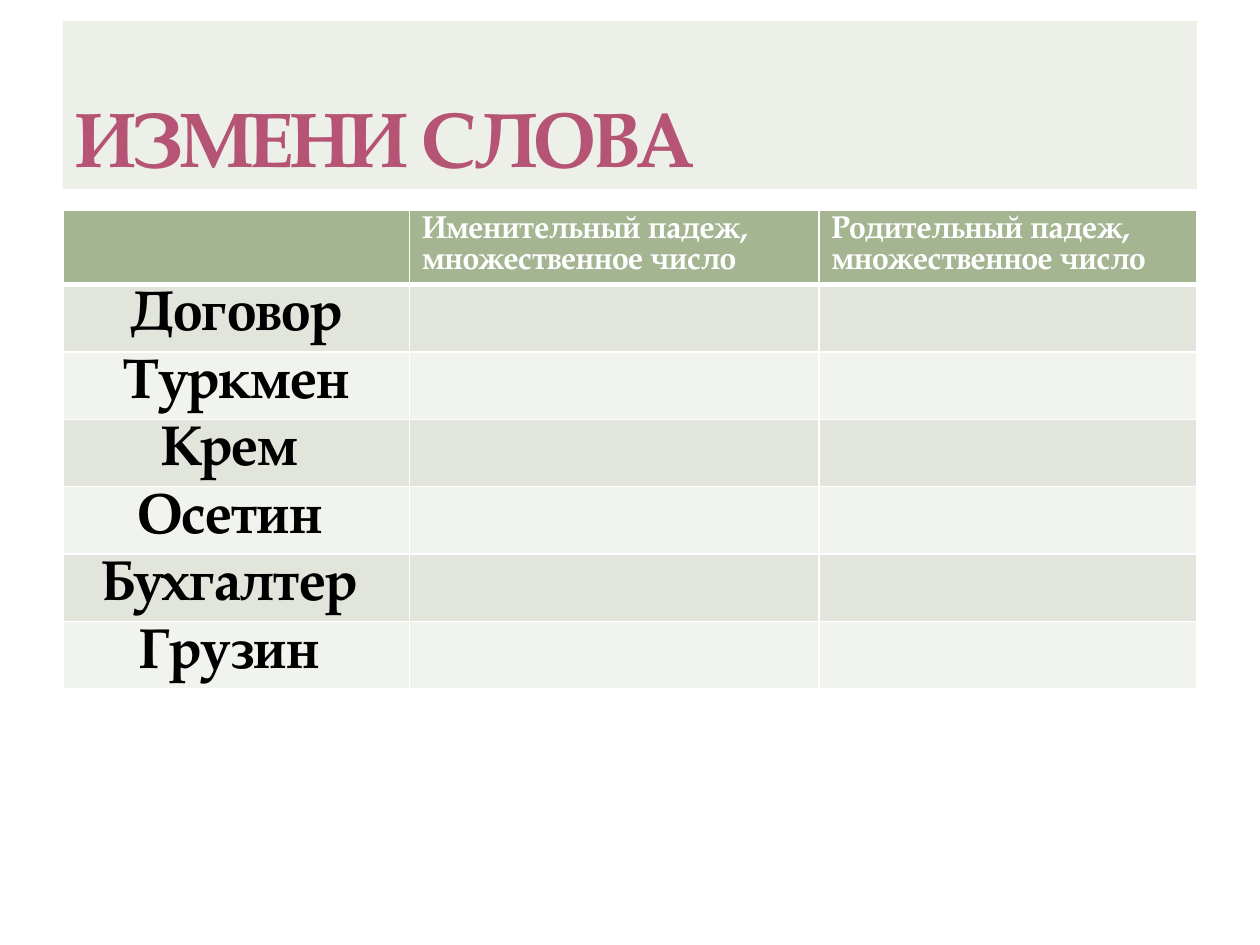
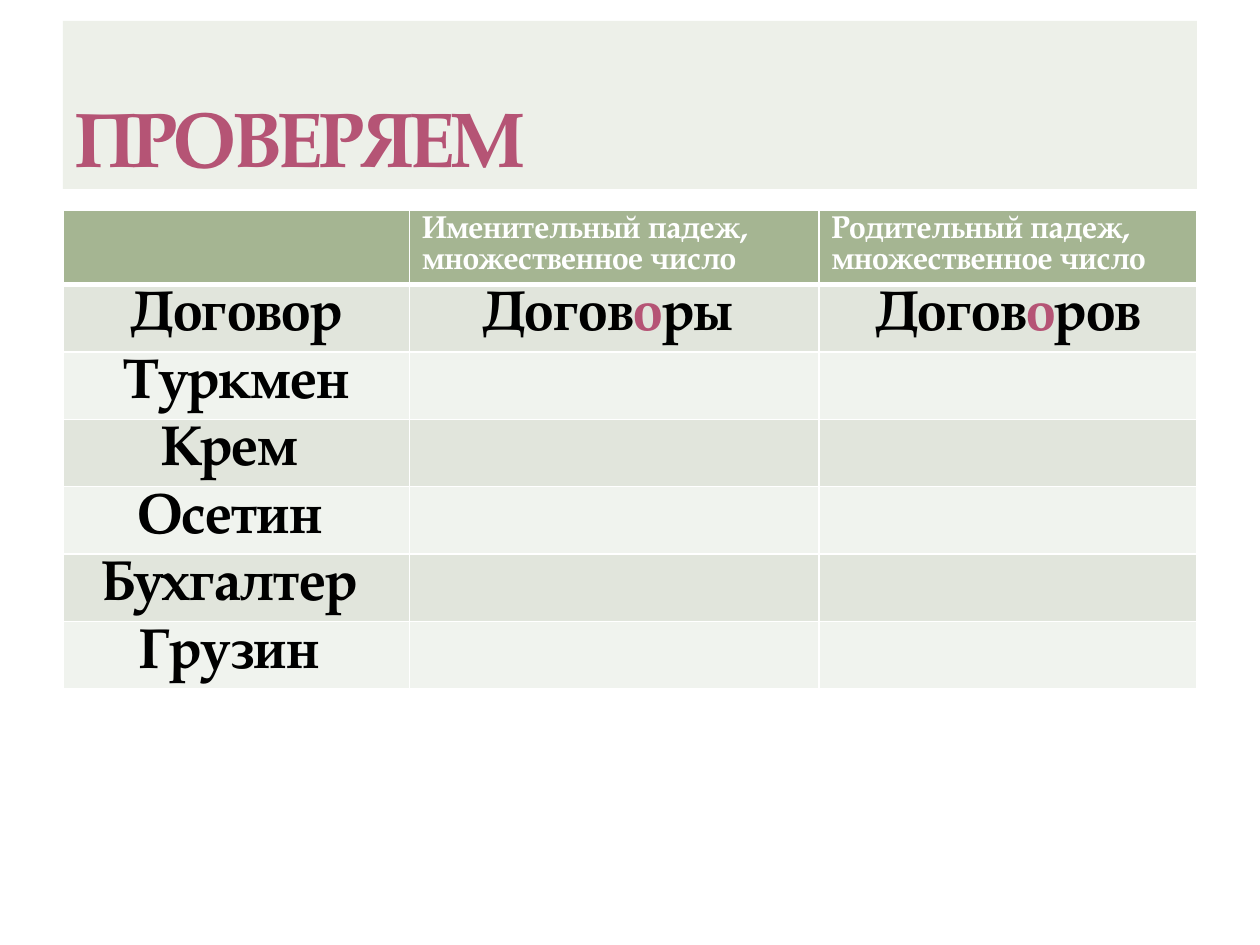
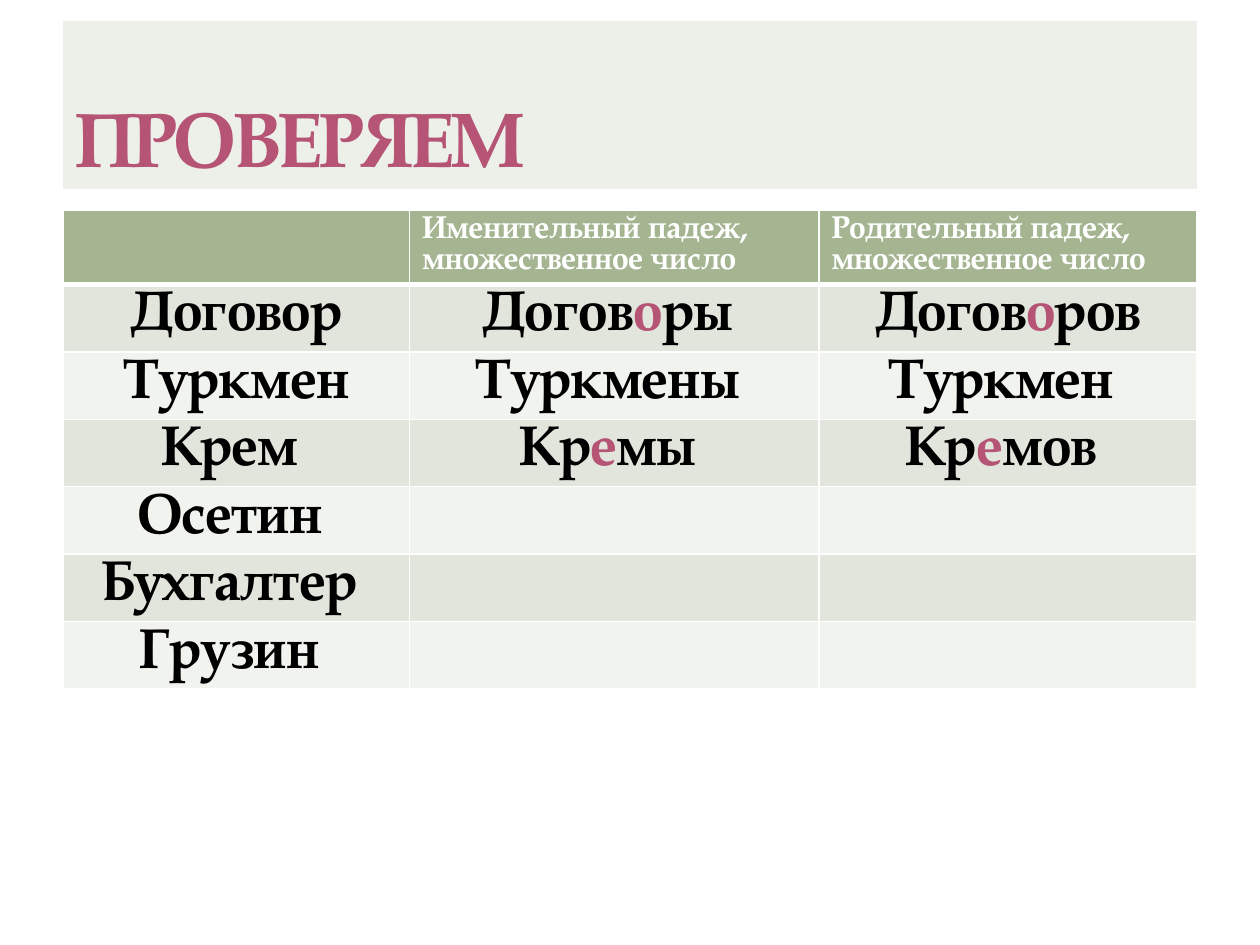
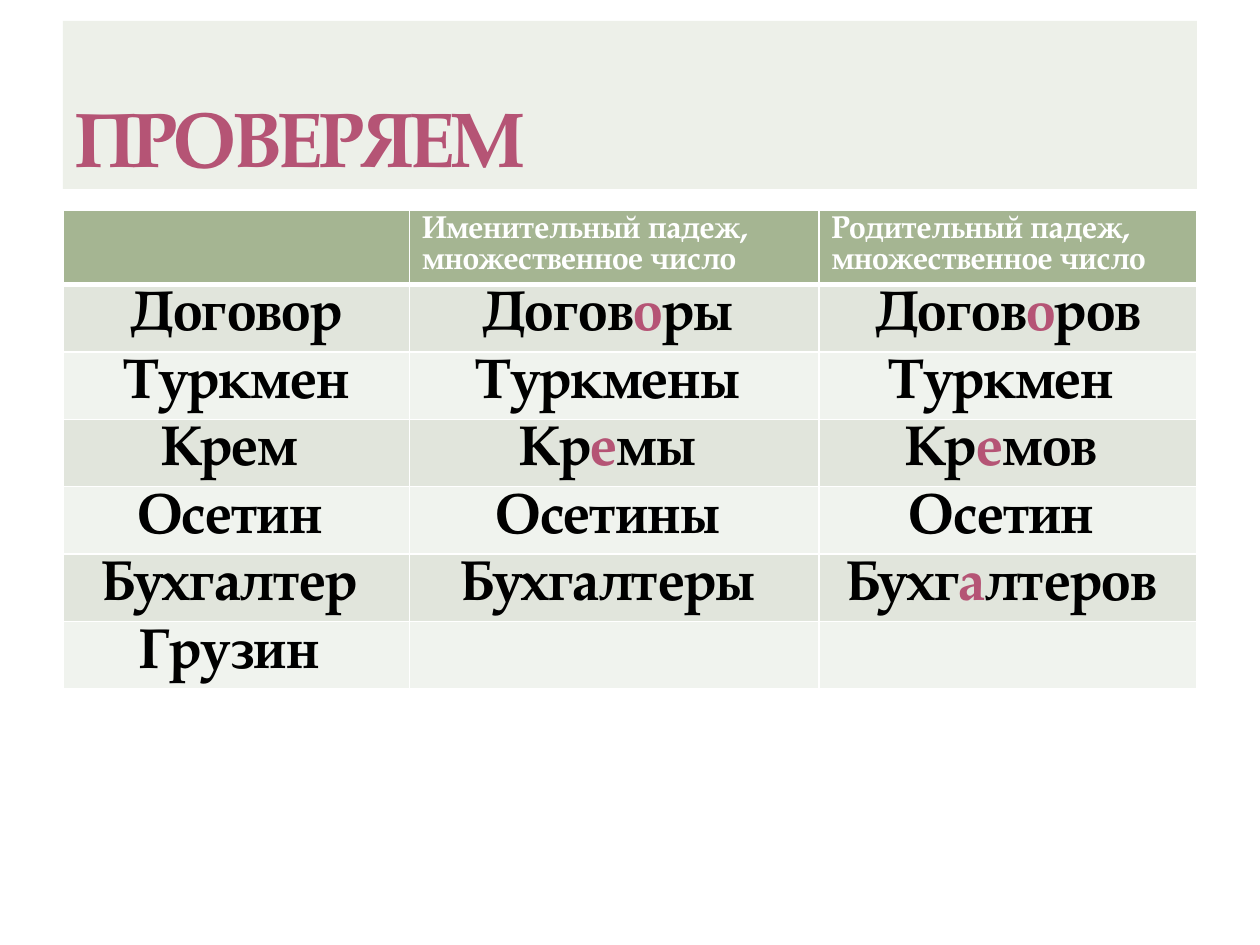
"""Build four slides that reveal the plural forms of six nouns step by step."""
from lxml.etree import SubElement
from pptx import Presentation
from pptx.dml.color import RGBColor
from pptx.enum.shapes import MSO_SHAPE as Shape
from pptx.enum.text import MSO_ANCHOR as Anchor, PP_ALIGN as Align
from pptx.oxml.ns import qn
from pptx.util import Pt

SLIDES = [("ИЗМЕНИ СЛОВА", 0), ("ПРОВЕРЯЕМ", 1), ("ПРОВЕРЯЕМ", 3), ("ПРОВЕРЯЕМ", 5)]
HEADINGS = [
    "",
    "Именительный падеж, множественное число",
    "Родительный падеж, множественное число",
]
WORDS = [
    ("Договор", "Догов*о*ры ", "Догов*о*ров"),
    ("Туркмен", "Туркмены ", "Туркмен "),
    ("Крем ", "Кр*е*мы ", "Кр*е*мов "),
    ("Осетин ", "Осетины ", "Осетин "),
    ("Бухгалтер ", "Бухгалтеры ", "Бухг*а*лтеров "),
    ("Грузин ", "", ""),
]

FONT = "TeX Gyre Pagella"
ACCENT, BAND, OUTLINE = "B55475", "EDF0E9", "E0DDB1"
HEADER, STRIPES = "A5B592", ("E1E5DC", "F0F3EE")
WHITE, BLACK = "FFFFFF", "000000"
LEFT, WIDTH = 36, 648
TITLE_TOP, TITLE_HEIGHT = 12, 96
TABLE_TOP, TABLE_HEIGHT, ROW_HEIGHT = 120, 324, 29.2
COLUMN_WIDTHS = (198, 234, 216)


def set_fill(item, color):
    """Fill a shape, cell or font with a solid colour."""
    item.fill.solid()
    item.fill.fore_color.rgb = RGBColor.from_string(color)


def add_color(parent, color):
    """Append a solid fill to a line element and return its colour element."""
    return SubElement(SubElement(parent, qn("a:solidFill")), qn("a:srgbClr"), val=color)


def write(frame, text, size, color, align=Align.LEFT):
    """Write bold text, with the parts between asterisks in the accent colour."""
    paragraph = frame.paragraphs[0]
    paragraph.alignment = align
    for index, part in enumerate(text.split("*")):
        run = paragraph.add_run()
        run.text = part
        run.font.name, run.font.size, run.font.bold = FONT, Pt(size), True
        set_fill(run.font, ACCENT if index % 2 else color)
    return paragraph


def add_title(slide, text):
    """Add the title band with tightened, finely outlined lettering."""
    band = slide.shapes.add_shape(
        Shape.RECTANGLE, Pt(LEFT), Pt(TITLE_TOP), Pt(WIDTH), Pt(TITLE_HEIGHT))
    band.shadow.inherit = False
    band.line.fill.background()
    set_fill(band, BAND)
    band.text_frame.word_wrap = True
    band.text_frame.vertical_anchor = Anchor.BOTTOM
    paragraph = write(band.text_frame, text, 44, ACCENT)
    properties = paragraph.runs[0].font._element
    properties.set("spc", "-100")
    line = SubElement(properties, qn("a:ln"), w=str(Pt(0.25)))
    SubElement(add_color(line, OUTLINE), qn("a:alpha"), val="25000")
    properties.insert(0, line)


def style_cell(cell, color, top, bottom):
    """Give a cell white borders and a fill."""
    properties = cell._tc.get_or_add_tcPr()
    for side, width in zip("LRTB", (1, 1, top, bottom)):
        add_color(SubElement(properties, qn(f"a:ln{side}"), w=str(Pt(width))), WHITE)
    set_fill(cell, color)


def add_word_table(slide, revealed):
    """Add the word table, answering only the first revealed rows."""
    rows = [HEADINGS] + [
        word if index < revealed else (word[0], "", "")
        for index, word in enumerate(WORDS)]
    frame = slide.shapes.add_table(
        len(rows), len(HEADINGS), Pt(LEFT), Pt(TABLE_TOP), Pt(WIDTH), Pt(TABLE_HEIGHT))
    table = frame.table
    table.horz_banding = table.first_row = False
    for column, width in zip(table.columns, COLUMN_WIDTHS):
        column.width = Pt(width)
    for index, texts in enumerate(rows):
        table.rows[index].height = Pt(ROW_HEIGHT)
        is_header = index == 0
        color = HEADER if is_header else STRIPES[(index - 1) % 2]
        text_format = (18, WHITE) if is_header else (32, BLACK, Align.CENTER)
        for cell, text in zip(table.rows[index].cells, texts):
            style_cell(cell, color, 3 if index == 1 else 1, 3 if is_header else 1)
            if text:
                write(cell.text_frame, text, *text_format)
    frame.height = Pt(TABLE_HEIGHT)


def main():
    """Build and save the presentation."""
    presentation = Presentation()
    presentation.slide_width, presentation.slide_height = Pt(720), Pt(540)
    for title, revealed in SLIDES:
        slide = presentation.slides.add_slide(presentation.slide_layouts[6])
        add_word_table(slide, revealed)
        add_title(slide, title)
    presentation.save("out.pptx")


if __name__ == "__main__":
    main()
